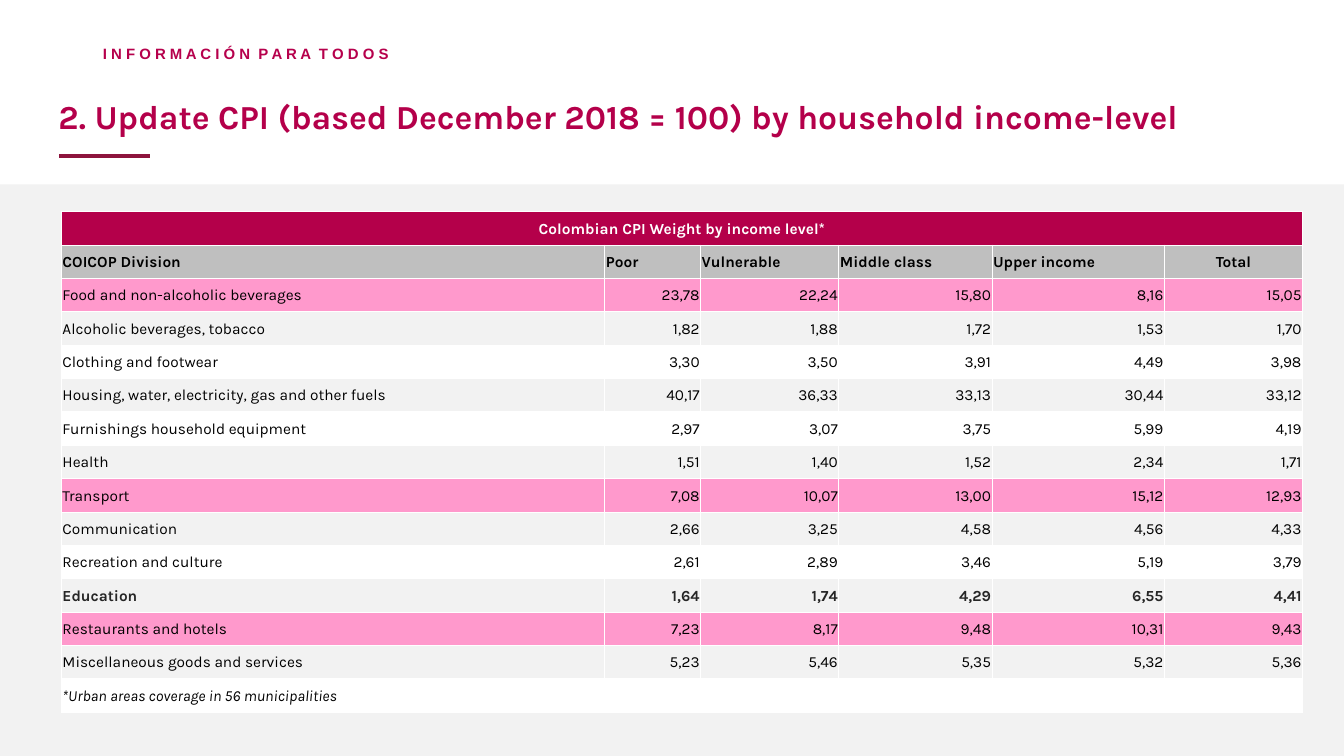
from lxml import etree
from pptx import Presentation
from pptx.dml.color import RGBColor
from pptx.enum.shapes import MSO_CONNECTOR, MSO_SHAPE
from pptx.enum.text import MSO_ANCHOR, MSO_AUTO_SIZE, PP_ALIGN
from pptx.oxml.ns import qn
from pptx.util import Inches, Pt

LEFT, CENTER, RIGHT = PP_ALIGN.LEFT, PP_ALIGN.CENTER, PP_ALIGN.RIGHT
JUSTIFY = PP_ALIGN.JUSTIFY
TOP, MIDDLE = MSO_ANCHOR.TOP, MSO_ANCHOR.MIDDLE
FIT_SHAPE = MSO_AUTO_SIZE.SHAPE_TO_FIT_TEXT
RECTANGLE, STRAIGHT = MSO_SHAPE.RECTANGLE, MSO_CONNECTOR.STRAIGHT

CRIMSON = RGBColor(0xB4, 0x00, 0x4A)
SLOGAN_RED = RGBColor(0xB6, 0x00, 0x4C)
WINE = RGBColor(0x8D, 0x14, 0x3D)
PINK = RGBColor(0xFF, 0x99, 0xCC)
SILVER = RGBColor(0xBF, 0xBF, 0xBF)
PALE_GRAY = RGBColor(0xF2, 0xF2, 0xF2)
CHARCOAL = RGBColor(0x26, 0x26, 0x26)
BLACK = RGBColor(0x00, 0x00, 0x00)
WHITE = RGBColor(0xFF, 0xFF, 0xFF)

TABLE_TITLE = "Colombian CPI Weight by income level*"
FOOTNOTE = "*Urban areas coverage in 56 municipalities"
HEADINGS = ["COICOP Division", "Poor", "Vulnerable", "Middle class", "Upper income", "Total"]
WEIGHTS = [
    ["Food and non-alcoholic beverages", "23,78", "22,24", "15,80", "8,16", "15,05"],
    ["Alcoholic beverages, tobacco", "1,82", "1,88", "1,72", "1,53", "1,70"],
    ["Clothing and footwear", "3,30", "3,50", "3,91", "4,49", "3,98"],
    ["Housing, water, electricity, gas and other fuels", "40,17", "36,33", "33,13", "30,44", "33,12"],
    ["Furnishings household equipment", "2,97", "3,07", "3,75", "5,99", "4,19"],
    ["Health", "1,51", "1,40", "1,52", "2,34", "1,71"],
    ["Transport", "7,08", "10,07", "13,00", "15,12", "12,93"],
    ["Communication", "2,66", "3,25", "4,58", "4,56", "4,33"],
    ["Recreation and culture", "2,61", "2,89", "3,46", "5,19", "3,79"],
    ["Education", "1,64", "1,74", "4,29", "6,55", "4,41"],
    ["Restaurants and hotels", "7,23", "8,17", "9,48", "10,31", "9,43"],
    ["Miscellaneous goods and services", "5,23", "5,46", "5,35", "5,32", "5,36"],
]
HIGHLIGHTED = {"Food and non-alcoholic beverages", "Transport", "Restaurants and hotels"}
EMPHASIZED = "Education"
COLUMN_WIDTHS = [5.39, 0.95, 1.37, 1.52, 1.71, 1.37]


class SlideBuilder:
    """Draws the elements of one slide in a shared style."""

    def __init__(self, presentation, font_name="Karla"):
        self.font_name = font_name
        self.slide = presentation.slides.add_slide(presentation.slide_layouts[5])

    def place(self, shape, left, top, width, height):
        shape.left, shape.top = Inches(left), Inches(top)
        shape.width, shape.height = Inches(width), Inches(height)

    def style(self, paragraph, size, color, bold=False, italic=False, align=LEFT, name=None):
        paragraph.alignment = align
        font = paragraph.font
        font.name = name or self.font_name
        font.size = Pt(size)
        font.bold, font.italic = bold, italic
        font.color.rgb = color

    def title(self, text, *box):
        shape = self.slide.shapes.title
        self.place(shape, *box)
        frame = shape.text_frame
        frame.text = text
        frame.word_wrap = True
        frame.auto_size = FIT_SHAPE
        frame.vertical_anchor = TOP
        self.style(frame.paragraphs[0], 24, CRIMSON, bold=True)

    def slogan(self, text, *box):
        frame = self.slide.shapes.add_textbox(*map(Inches, box)).text_frame
        frame.text = text
        frame.word_wrap = True
        frame.auto_size = FIT_SHAPE
        frame.margin_left = frame.margin_right = frame.margin_bottom = 0
        frame.margin_top = Inches(0.02)
        paragraph = frame.paragraphs[0]
        paragraph.line_spacing = 1.3
        self.style(paragraph, 10.7, SLOGAN_RED, bold=True, align=JUSTIFY, name="Arial")

    def panel(self, color, *box):
        shape = self.slide.shapes.add_shape(RECTANGLE, *map(Inches, box))
        shape.shadow.inherit = False
        shape.fill.solid()
        shape.fill.fore_color.rgb = color
        shape.line.fill.background()

    def rule(self, color, width, *ends):
        line = self.slide.shapes.add_connector(STRAIGHT, *map(Inches, ends))
        line.line.color.rgb = color
        line.line.width = Pt(width)
        etree.SubElement(line._element.spPr, qn("a:effectLst"))

    def table(self, row_count, column_widths, left, top, height):
        box = map(Inches, (left, top, sum(column_widths), height))
        table = self.slide.shapes.add_table(row_count, len(column_widths), *box).table
        table.first_row = table.horz_banding = False
        for column, width in zip(table.columns, column_widths):
            column.width = Inches(width)
        for row in table.rows:
            row.height = Inches(height / row_count)
        return table

    def cell(self, cell, text, fill, color=BLACK, **style):
        cell.margin_left = cell.margin_right = cell.margin_top = Inches(0.01)
        cell.margin_bottom = 0
        cell.vertical_anchor = MIDDLE
        self.borders(cell)
        if fill is None:
            cell.fill.background()
        else:
            cell.fill.solid()
            cell.fill.fore_color.rgb = fill
        cell.text = text
        self.style(cell.text_frame.paragraphs[0], 11, color, **style)

    def borders(self, cell):
        properties = cell._tc.get_or_add_tcPr()
        for side in ("a:lnL", "a:lnR", "a:lnT", "a:lnB"):
            line = etree.SubElement(properties, qn(side), w=str(Pt(0.75)))
            fill = etree.SubElement(line, qn("a:solidFill"))
            etree.SubElement(fill, qn("a:srgbClr"), val=str(WHITE))


def weight_fill(index, division):
    if division in HIGHLIGHTED:
        return PINK
    return None if index % 2 else WHITE


def fill_table(builder, table):
    last_row, last_column = len(table.rows) - 1, len(HEADINGS) - 1
    for column, heading in enumerate(HEADINGS):
        builder.cell(table.cell(0, column), "" if column else TABLE_TITLE, CRIMSON,
                     WHITE, bold=True, align=CENTER)
        builder.cell(table.cell(1, column), heading, SILVER, bold=True,
                     align=CENTER if column == last_column else LEFT)
        builder.cell(table.cell(last_row, column), "" if column else FOOTNOTE, WHITE, italic=True)
    table.cell(0, 0).merge(table.cell(0, last_column))
    for index, weights in enumerate(WEIGHTS):
        division = weights[0]
        emphasized = division == EMPHASIZED
        for column, text in enumerate(weights):
            builder.cell(table.cell(index + 2, column), text, weight_fill(index, division),
                         CHARCOAL if emphasized else BLACK, bold=emphasized,
                         align=RIGHT if column else LEFT)


def main():
    presentation = Presentation()
    presentation.slide_width, presentation.slide_height = Inches(13.33), Inches(7.5)
    builder = SlideBuilder(presentation)
    builder.slogan("I N F O R M A C I Ó N  P A R A  T O D O S", 1.02, 0.37, 4.1, 0.23)
    builder.panel(PALE_GRAY, 0, 1.83, 13.33, 5.67)
    builder.title("2. Update CPI (based December 2018 = 100) by household income-level",
                  0.48, 0.9, 11.7, 0.5)
    fill_table(builder, builder.table(len(WEIGHTS) + 3, COLUMN_WIDTHS, 0.61, 2.1, 4.97))
    builder.rule(WINE, 3, 0.59, 1.55, 1.49, 1.55)
    presentation.save("out.pptx")


if __name__ == "__main__":
    main()
